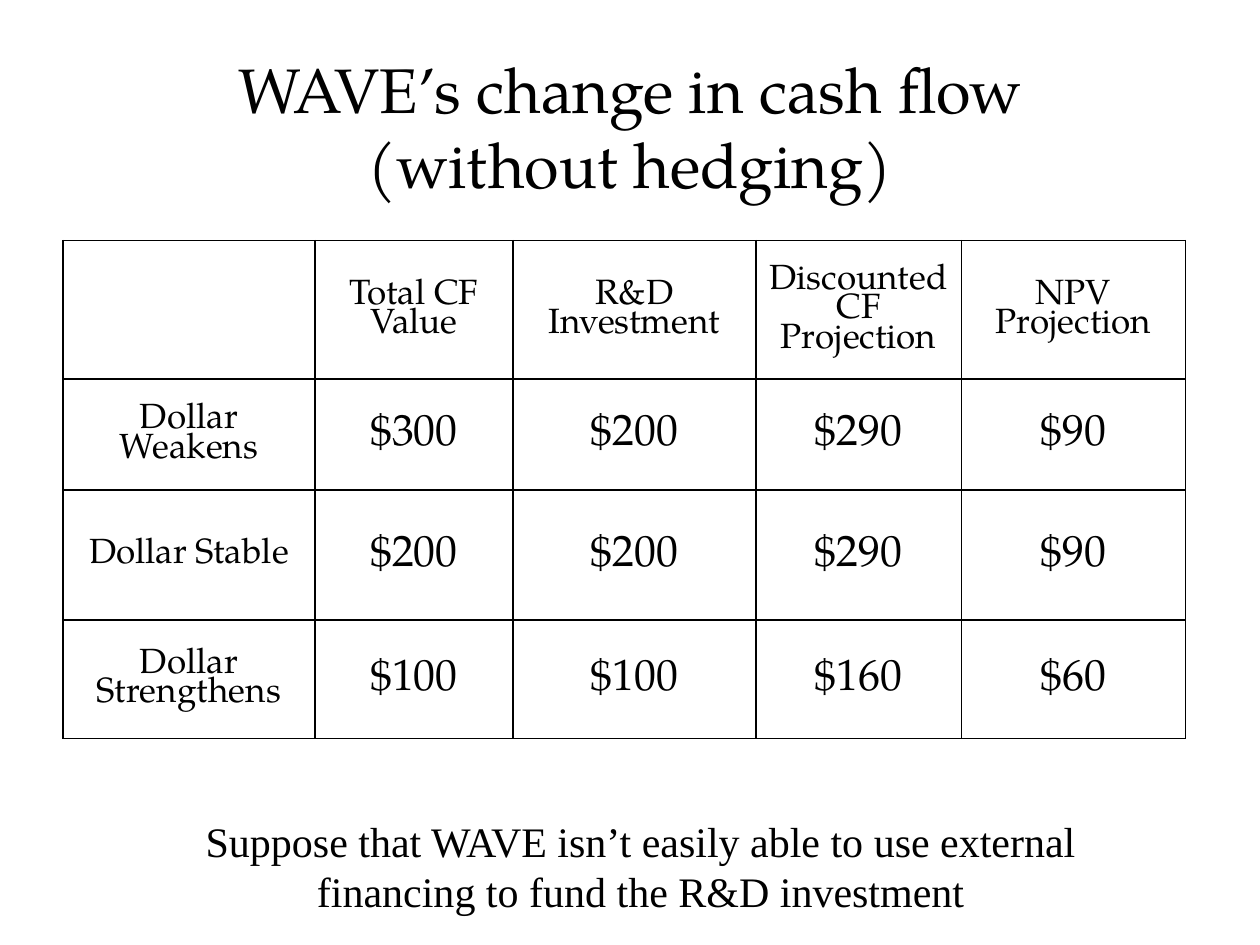
"""Build the slide on WAVE's change in cash flow without hedging."""
from dataclasses import dataclass

from lxml.etree import SubElement
from pptx import Presentation
from pptx.dml.color import RGBColor
from pptx.enum.text import MSO_ANCHOR, PP_ALIGN
from pptx.oxml.ns import qn
from pptx.util import Inches, Pt


@dataclass(frozen=True)
class Theme:
    ink: str = "000000"
    paper: str = "FFFFFF"
    serif: str = "TeX Gyre Pagella"
    note_font: str = "Times New Roman"
    title: int = 36
    label: int = 20
    amount: int = 25
    note: int = 24
    border: int = 1


THEME = Theme()


def write(tf, text, font, size):
    tf.word_wrap = True
    p = tf.paragraphs[0]
    p.text = text
    p.alignment = PP_ALIGN.CENTER
    p.font.name = font
    p.font.size = Pt(size)
    p.font.color.rgb = RGBColor.from_string(THEME.ink)
    return p


def set_borders(cell):
    tc_pr = cell._tc.get_or_add_tcPr()
    for i, side in enumerate(("lnL", "lnR", "lnT", "lnB")):
        ln = SubElement(tc_pr, qn(f"a:{side}"), w=str(Pt(THEME.border)))
        fill = SubElement(ln, qn("a:solidFill"))
        SubElement(fill, qn("a:srgbClr"), val=THEME.ink)
        tc_pr.remove(ln)
        tc_pr.insert(i, ln)


prs = Presentation()
prs.slide_width, prs.slide_height = Inches(10), Inches(7.5)
s = prs.slides.add_slide(prs.slide_layouts[6])

title = s.shapes.add_textbox(Inches(0.75), Inches(0.5), Inches(8.5), Inches(1))
tf = title.text_frame
tf.vertical_anchor = MSO_ANCHOR.MIDDLE
tf.margin_left = tf.margin_right = Inches(0.5)
write(tf, "WAVE’s change in cash flow (without hedging)", THEME.serif, THEME.title)

rows = [
    ["", "Total CF Value", "R&D Investment", "Discounted CF Projection", "NPV Projection"],
    ["Dollar Weakens", "$300", "$200", "$290", "$90"],
    ["Dollar Stable", "$200", "$200", "$290", "$90"],
    ["Dollar Strengthens", "$100", "$100", "$160", "$60"],
]
widths = [2, 1.57, 1.93, 1.63, 1.78]
heights = [1.1, 0.88, 1.03, 0.94]
table = s.shapes.add_table(
    len(rows), len(widths), Inches(0.5), Inches(1.91), Inches(sum(widths)), Inches(sum(heights))
).table
for column, width in zip(table.columns, widths):
    column.width = Inches(width)
for row, height in zip(table.rows, heights):
    row.height = Inches(height)

for i, values in enumerate(rows):
    for j, value in enumerate(values):
        cell = table.cell(i, j)
        cell.vertical_anchor = MSO_ANCHOR.MIDDLE
        cell.fill.solid()
        cell.fill.fore_color.rgb = RGBColor.from_string(THEME.paper)
        set_borders(cell)
        size = THEME.amount if i and j else THEME.label
        p = write(cell.text_frame, value, THEME.serif, size)
        p.font.bold = False
        p.line_spacing = 0.84

note = s.shapes.add_textbox(Inches(1), Inches(6.42), Inches(8.17), Inches(0.91))
write(
    note.text_frame,
    "Suppose that WAVE isn’t easily able to use external financing to fund the R&D investment",
    THEME.note_font,
    THEME.note,
)

prs.save("out.pptx")
